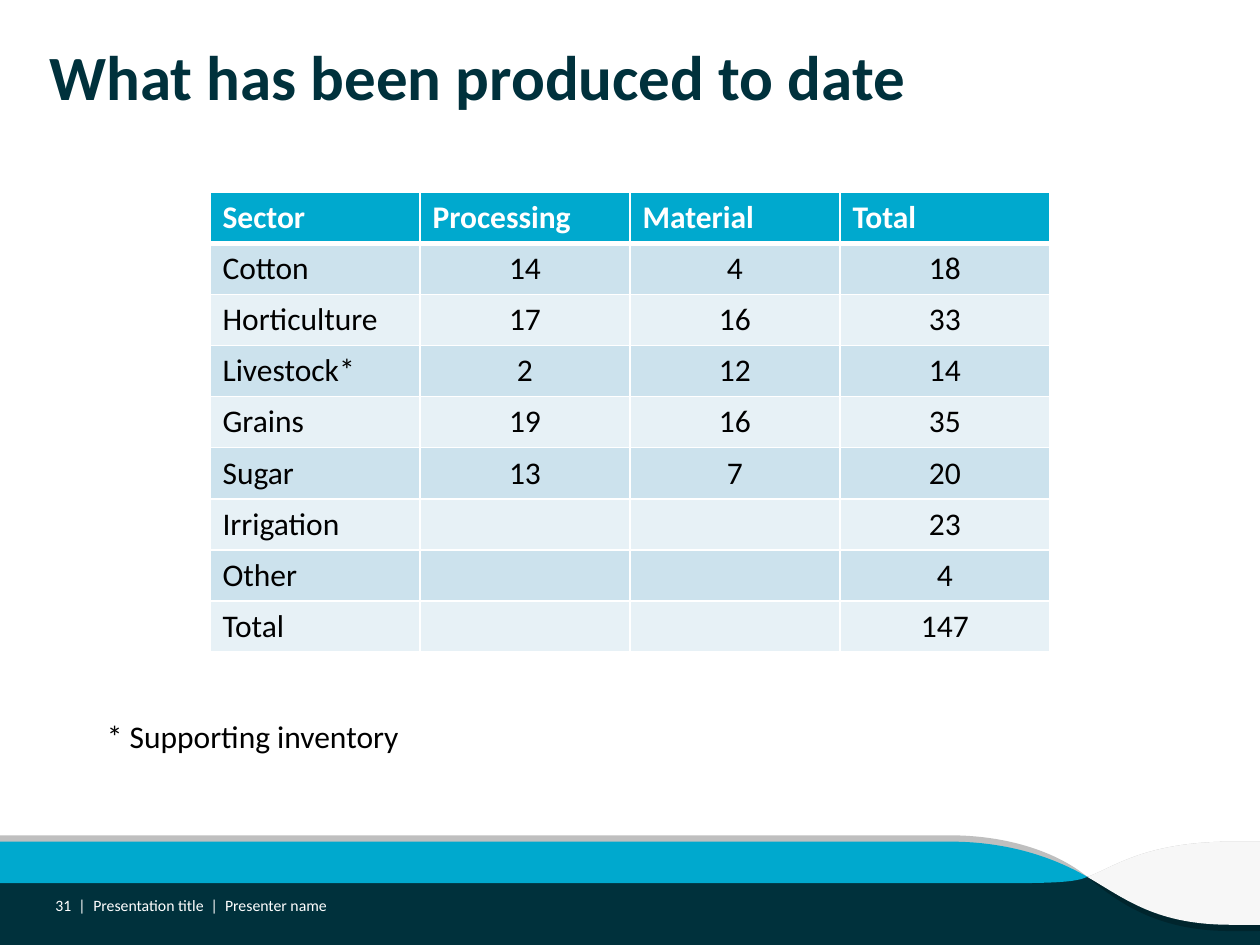
"""Build a slide that tabulates the products made to date in each sector."""

from dataclasses import dataclass

from lxml.etree import SubElement
from pptx import Presentation
from pptx.dml.color import RGBColor
from pptx.enum.shapes import MSO_SHAPE
from pptx.enum.text import MSO_ANCHOR, PP_ALIGN
from pptx.oxml.ns import qn
from pptx.util import Inches, Pt

WIDTH, HEIGHT = Inches(10), Inches(7.5)
COLUMNS, ROWS = 1000, 750

Point = tuple[float, float]


@dataclass(frozen=True)
class Theme:
    font: str = "Calibri"
    navy: str = "00313C"
    shade: str = "00252D"
    cyan: str = "00A9CE"
    grey: str = "BFBFBF"
    pale: str = "F7F7F7"
    white: str = "FFFFFF"
    black: str = "000000"
    bands: tuple[str, str] = ("CCE2ED", "E7F1F6")
    title_size: int = 36
    body_size: int = 18
    footer_size: int = 9
    thin_border: int = 1
    heavy_border: int = 3


@dataclass(frozen=True)
class Area:
    left: float
    top: float
    width: float
    height: float

    def lengths(self) -> tuple[int, int, int, int]:
        """Return left, top, width and height as slide lengths."""
        return (*place((self.left, self.top)), *place((self.width, self.height)))


@dataclass(frozen=True)
class Label:
    text: str
    area: Area
    size: int
    color: str
    bold: bool = False
    align: PP_ALIGN = PP_ALIGN.LEFT
    anchor: MSO_ANCHOR = MSO_ANCHOR.TOP
    inset: bool = False


@dataclass(frozen=True)
class Contour:
    start: Point
    segments: tuple[tuple[Point, ...], ...]


@dataclass(frozen=True)
class Wave:
    color: str
    contours: tuple[Contour, ...]


THEME = Theme()
CROSSING = (863, 696)
TABLE_AREA = Area(166.67, 152.6, 666.67, 365)
FOOTER_BAND = Area(0, 696, 1000, 54)

WAVES = (
    Wave(THEME.grey, (
        Contour((1000, 668), (
            ((978, 668),), ((908, 668), (883, 689), CROSSING),
            ((1000, 696),), ((1000, 739),), ((1000, 668),))),
        Contour((754, 663), (
            ((0, 663),), ((0, 696),), (CROSSING,),
            ((840, 677), (801, 663), (754, 663)))))),
    Wave(THEME.shade, (
        Contour(CROSSING, (
            ((0, 696),), ((0, 701),), ((795, 701),),
            ((840, 701), (854, 700), CROSSING))),
        Contour((1000, 696), (
            (CROSSING,), ((887, 716), (918, 739), (977, 739)),
            ((1000, 739),), ((1000, 696),))))),
    Wave(THEME.cyan, (
        Contour(CROSSING, (
            ((837, 681), (801, 668), (754, 668)), ((0, 668),), ((0, 701),),
            ((795, 701),), ((840, 701), (854, 700), CROSSING))),)),
    Wave(THEME.pale, (
        Contour((978, 668), (
            ((908, 668), (883, 689), CROSSING),
            ((894, 714), (918, 734), (977, 734)),
            ((1000, 734),), ((1000, 668),), ((978, 668),))),)),
)

LABELS = (
    Label("What has been produced to date", Area(39, 30, 925, 93),
          THEME.title_size, THEME.navy, bold=True),
    Label("Presentation title  |  Presenter name", Area(74, 711.5, 665, 14),
          THEME.footer_size, THEME.white, anchor=MSO_ANCHOR.MIDDLE),
    Label("31  |", Area(36, 711.5, 32, 14), THEME.footer_size, THEME.white,
          align=PP_ALIGN.RIGHT, anchor=MSO_ANCHOR.MIDDLE),
    Label("* Supporting inventory", Area(75, 564, 630, 40),
          THEME.body_size, THEME.black, inset=True),
)

PRODUCTS = (
    ("Sector", "Processing", "Material", "Total"),
    ("Cotton", "14", "4", "18"),
    ("Horticulture", "17", "16", "33"),
    ("Livestock*", "2", "12", "14"),
    ("Grains", "19", "16", "35"),
    ("Sugar", "13", "7", "20"),
    ("Irrigation", "", "", "23"),
    ("Other", "", "", "4"),
    ("Total", "", "", "147"),
)


def place(point: Point) -> Point:
    """Turn grid columns and rows into slide lengths."""
    return round(point[0] * WIDTH / COLUMNS), round(point[1] * HEIGHT / ROWS)


def paint(shape, color: str) -> None:
    """Give a shape a flat fill with no outline or shadow."""
    shape.shadow.inherit = False
    shape.fill.solid()
    shape.fill.fore_color.rgb = RGBColor.from_string(color)
    shape.line.fill.background()


def bend(shape, segments: list[tuple[Point, ...]]) -> None:
    """Join the lines through each three-point segment into one cubic curve."""
    lines = iter(list(shape._element.iter(qn("a:lnTo"))))
    for segment in segments:
        first, *others = [next(lines) for _ in segment]
        if others:
            first.tag = qn("a:cubicBezTo")
            for line in others:
                first.append(line[0])
                line.getparent().remove(line)


def draw_wave(slide, wave: Wave) -> None:
    """Draw all contours of a wave as one freeform."""
    builder = slide.shapes.build_freeform(*place(wave.contours[0].start))
    for index, contour in enumerate(wave.contours):
        if index:
            builder.move_to(*place(contour.start))
        points = [place(point) for segment in contour.segments for point in segment]
        builder.add_line_segments(points, close=False)
    shape = builder.convert_to_shape()
    bend(shape, [segment for contour in wave.contours for segment in contour.segments])
    paint(shape, wave.color)


def write(text_frame, text: str, size: int, color: str, bold: bool, align: PP_ALIGN) -> None:
    """Set the text of a frame and format its paragraph."""
    text_frame.text = text
    paragraph = text_frame.paragraphs[0]
    paragraph.alignment = align
    for run in paragraph.runs:
        run.font.name, run.font.size, run.font.bold = THEME.font, Pt(size), bold
        run.font.color.rgb = RGBColor.from_string(color)


def draw_label(slide, label: Label) -> None:
    """Draw a wrapped text box."""
    text_frame = slide.shapes.add_textbox(*label.area.lengths()).text_frame
    text_frame.word_wrap = True
    text_frame.vertical_anchor = label.anchor
    if not label.inset:
        text_frame.margin_left = text_frame.margin_right = 0
        text_frame.margin_top = text_frame.margin_bottom = 0
    write(text_frame, label.text, label.size, label.color, label.bold, label.align)


def add_borders(cell, row: int) -> None:
    """Add white cell borders, heavy on the line below the header."""
    properties = cell._tc.get_or_add_tcPr()
    heavy_side = {0: "lnB", 1: "lnT"}.get(row)
    for side in ("lnL", "lnR", "lnT", "lnB"):
        width = THEME.heavy_border if side == heavy_side else THEME.thin_border
        border = SubElement(properties, qn(f"a:{side}"), w=str(Pt(width)))
        fill = SubElement(border, qn("a:solidFill"))
        SubElement(fill, qn("a:srgbClr"), val=THEME.white)


def draw_table(slide, area: Area, content: tuple[tuple[str, ...], ...]) -> None:
    """Draw a banded table with a coloured header row."""
    table = slide.shapes.add_table(len(content), len(content[0]), *area.lengths()).table
    for row, values in enumerate(content):
        header = row == 0
        background = THEME.cyan if header else THEME.bands[(row - 1) % 2]
        color = THEME.white if header else THEME.black
        for column, value in enumerate(values):
            cell = table.cell(row, column)
            add_borders(cell, row)
            cell.fill.solid()
            cell.fill.fore_color.rgb = RGBColor.from_string(background)
            align = PP_ALIGN.LEFT if header or column == 0 else PP_ALIGN.CENTER
            write(cell.text_frame, value, THEME.body_size, color, header, align)


def main() -> None:
    """Build and save the presentation."""
    presentation = Presentation()
    presentation.slide_width, presentation.slide_height = WIDTH, HEIGHT
    slide = presentation.slides.add_slide(presentation.slide_layouts[6])
    paint(slide.shapes.add_shape(MSO_SHAPE.RECTANGLE, *FOOTER_BAND.lengths()), THEME.navy)
    for wave in WAVES:
        draw_wave(slide, wave)
    for label in LABELS:
        draw_label(slide, label)
    draw_table(slide, TABLE_AREA, PRODUCTS)
    presentation.save("out.pptx")


if __name__ == "__main__":
    main()
